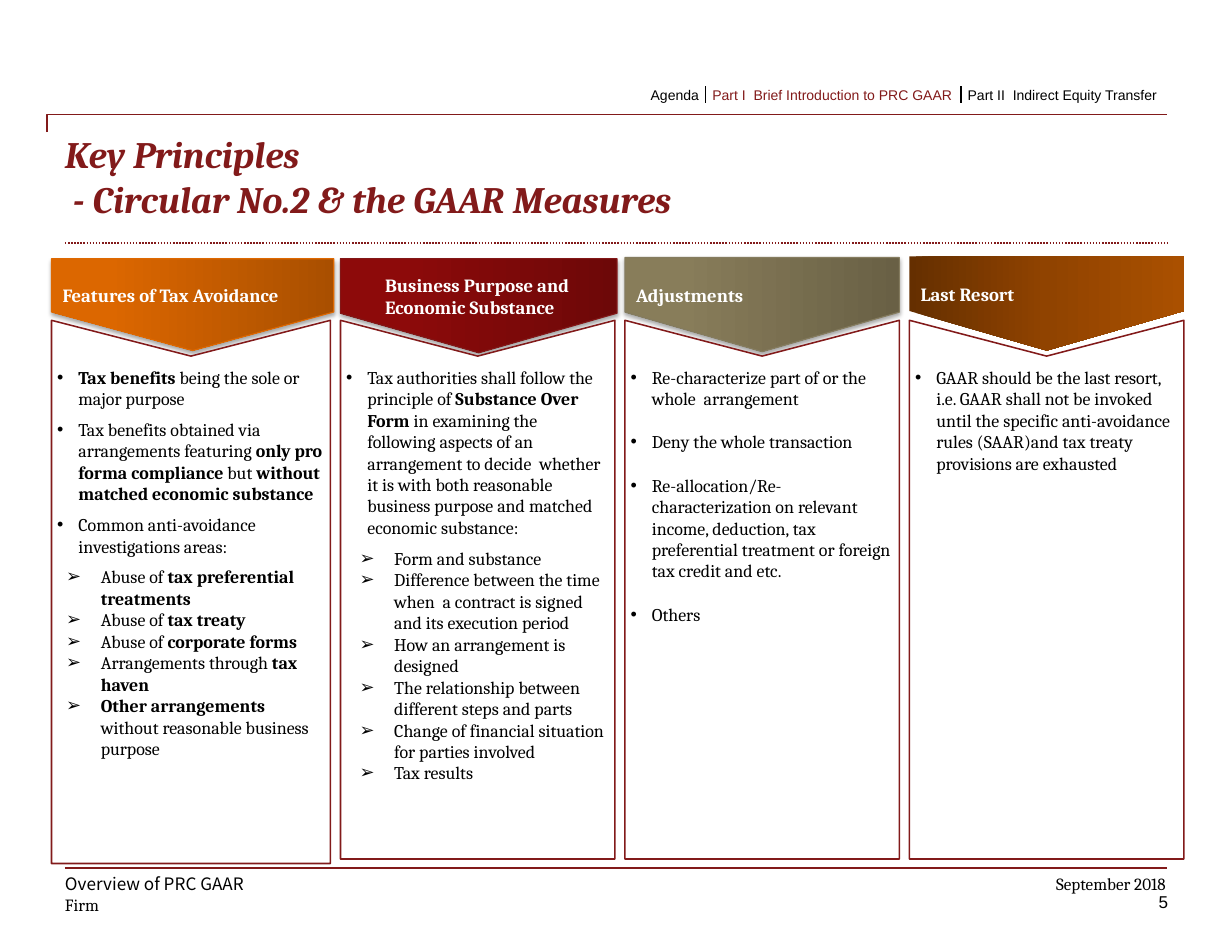
from copy import deepcopy
from dataclasses import dataclass

from lxml.etree import SubElement
from pptx import Presentation
from pptx.dml.color import RGBColor
from pptx.enum.shapes import MSO_CONNECTOR, MSO_SHAPE
from pptx.enum.dml import MSO_LINE
from pptx.enum.text import MSO_ANCHOR, MSO_AUTO_SIZE, PP_ALIGN
from pptx.oxml.ns import qn
from pptx.util import Inches, Pt


@dataclass(frozen=True)
class Theme:
    serif: str = "Cambria"
    sans: str = "Arial"
    cjk: str = "Noto Sans CJK SC"
    maroon: str = "821A1A"
    black: str = "000000"
    white: str = "FFFFFF"
    title: float = 24
    head: float = 12
    body: float = 11.5
    foot: float = 11
    nav: float = 9


@dataclass(frozen=True)
class Item:
    text: str  # **...** marks bold
    sub: bool = False
    before: float = 0
    after: float = 0


@dataclass(frozen=True)
class Column:
    heading: tuple[str, ...]
    stops: tuple[tuple[float, str], ...]
    edge: str | None  # header outline; None also means no shadow
    items: tuple[Item, ...]
    head_top: float
    head_width: float = 2.45
    head_height: float = 0.84
    bleed: float = 0  # extra reach to the left and down
    head_indent: float = 0  # left-aligned heading when set, else centred
    sub_indent: float = 0.43
    angle: int = 90


T = Theme()
WIDTH, HEIGHT = 11, 8.5
LEFT, RIGHT = 0.58, 10.42
COL_LEFT, COL_PITCH, COL_WIDTH = 0.5, 2.54, 2.45
BODY_TOP, BODY_HEIGHT, NOTCH = 2.86, 4.81, 0.32

COLUMNS = (
    Column(("Features of Tax Avoidance",),
           ((0, "A94F00"), (0.8, "DC6700"), (1, "DD6700")), "DE6800", (
        Item("**Tax benefits **being the sole or major purpose", after=6),
        Item("Tax benefits obtained via arrangements featuring **only pro forma "
             "compliance **but **without matched economic substance**", after=6),
        Item("Common anti-avoidance investigations areas:"),
        Item("Abuse of **tax preferential treatments**", True, before=6),
        Item("Abuse of **tax treaty**", True),
        Item("Abuse of **corporate forms**", True),
        Item("Arrangements through **tax haven**", True),
        Item("**Other arrangements **without reasonable business purpose", True),
    ), 2.31, 2.52, 0.82, bleed=0.04, sub_indent=0.39),
    Column(("Business Purpose and", "Economic Substance"),
           ((0, "6D0808"), (0.8, "8D0A0A"), (1, "900808")), "821717", (
        Item("Tax authorities shall follow the principle of **Substance Over Form **"
             "in examining the following aspects of an arrangement to decide  whether "
             "it is with both reasonable business purpose and matched economic substance:"),
        Item("Form and substance", True, before=6),
        Item("Difference between the time when  a contract is signed and its "
             "execution period", True),
        Item("How an arrangement is designed", True),
        Item("The relationship between different steps and parts", True),
        Item("Change of financial situation for parties involved", True),
        Item("Tax results", True),
    ), 2.31, 2.47, head_indent=0.3),
    Column(("Adjustments",),
           ((0, "696045"), (0.8, "887D5A"), (1, "8A7E59")), "857C5F", (
        Item("Re-characterize part of or the whole  arrangement", after=14),
        Item("Deny the whole transaction", after=14),
        Item("Re-allocation/Re-characterization on relevant income, deduction, tax "
             "preferential treatment or foreign tax credit and etc.", after=14),
        Item("Others"),
    ), 2.3),
    Column(("Last Resort",),
           ((0, "652F00"), (0.5, "904300"), (1, "AA5000")), None, (
        Item("GAAR should be the last resort, i.e. GAAR shall not be invoked until the "
             "specific anti-avoidance rules (SAAR)and tax treaty provisions are exhausted"),
    ), 2.29, angle=270),
)


def rgb(color: str) -> RGBColor:
    return RGBColor.from_string(color)


def add_run(p, text: str, size: float, font=T.serif, color=T.black, bold=False) -> None:
    r = p.add_run()
    r.text = text
    f = r.font
    f.name, f.size, f.bold, f.color.rgb = font, Pt(size), bold, rgb(color)


def set_insets(tf, x: float, y: float) -> None:
    tf.margin_left = tf.margin_right = Inches(x)
    tf.margin_top = tf.margin_bottom = Inches(y)


def add_label(s, box, text: str, size: float, font=T.serif, color=T.black,
              align=PP_ALIGN.LEFT, inset=0.0, leading=None) -> None:
    tf = s.shapes.add_textbox(*map(Inches, box)).text_frame
    set_insets(tf, inset, 0)
    tf.word_wrap = False
    p = tf.paragraphs[0]
    p.alignment = align
    if leading:
        p.line_spacing = Pt(leading)
    add_run(p, text, size, font, color)


def add_line(s, x1, y1, x2, y2, color=T.maroon, weight=0.75, kind=MSO_CONNECTOR.STRAIGHT):
    line = s.shapes.add_connector(kind, *map(Inches, (x1, y1, x2, y2)))
    line.line.color.rgb = rgb(color)
    line.line.width = Pt(weight)
    SubElement(line._element.spPr, qn("a:effectLst"))
    return line


def add_header(s, col: Column, left: float) -> None:
    # A pentagon turned to point down: its own width is the header's height
    w, h = col.head_height, col.head_width
    x, y = left + (h - w) / 2, col.head_top + (w - h) / 2
    sp = s.shapes.add_shape(MSO_SHAPE.PENTAGON, *map(Inches, (x, y, w, h)))
    sp.adjustments[0] = 0.42
    sp.rotation = 270
    spPr = sp._element.spPr
    spPr.find(qn("a:xfrm")).set("flipH", "1")
    sp.fill.gradient()
    sp.fill.gradient_angle = col.angle
    gs_list = spPr.find(".//" + qn("a:gsLst"))
    gs_list.append(deepcopy(gs_list[0]))
    for stop, (position, color) in zip(sp.fill.gradient_stops, col.stops):
        stop.position, stop.color.rgb = position, rgb(color)
    sp.line.fill.background()
    sp.shadow.inherit = False
    if col.edge:
        sp.line.color.rgb = rgb(col.edge)
        sp.line.width = Pt(0.75)
        shadow = SubElement(spPr.find(qn("a:effectLst")), qn("a:outerShdw"),
                            blurRad=str(Pt(3.1)), dist=str(Pt(1.8)),
                            dir="5400000", rotWithShape="0")
        clr = SubElement(shadow, qn("a:srgbClr"), val=T.black)
        SubElement(clr, qn("a:alpha"), val="35000")
    tf = sp.text_frame
    tf.word_wrap = False
    tf.vertical_anchor = MSO_ANCHOR.MIDDLE
    set_insets(tf, 0.05, 0.05)
    tf._txBody.bodyPr.set("vert", "eaVert")
    for i, text in enumerate(col.heading):
        p = tf.add_paragraph() if i else tf.paragraphs[0]
        p.alignment = PP_ALIGN.LEFT if col.head_indent else PP_ALIGN.CENTER
        p._p.get_or_add_pPr().set("marL", str(Inches(col.head_indent)))
        add_run(p, text, T.head, color=T.white, bold=True)


def add_item(p, item: Item, sub_indent: float) -> None:
    p.alignment = PP_ALIGN.LEFT
    p.level = int(item.sub)
    p.space_before, p.space_after = Pt(item.before), Pt(item.after)
    margin, hang, mark = (sub_indent, 0.31, "➢") if item.sub else (0.19, 0.19, "•")
    pPr = p._p.get_or_add_pPr()
    pPr.set("marL", str(Inches(margin)))
    pPr.set("indent", str(-Inches(hang)))
    SubElement(pPr, qn("a:buFont"), typeface=T.sans)
    SubElement(pPr, qn("a:buChar"), char=mark)
    for i, part in enumerate(item.text.split("**")):
        if part:
            add_run(p, part, T.body, bold=i % 2 == 1)


def add_body(s, col: Column, left: float, right: float) -> None:
    bottom = BODY_TOP + BODY_HEIGHT + col.bleed
    points = [(left, BODY_TOP), ((left + right) / 2, BODY_TOP + NOTCH),
              (right, BODY_TOP), (right, bottom), (left, bottom)]
    start, *rest = [(Inches(x), Inches(y)) for x, y in points]
    builder = s.shapes.build_freeform(*start)
    builder.add_line_segments(rest, close=True)
    sp = builder.convert_to_shape()
    sp.fill.solid()
    sp.fill.fore_color.rgb = rgb(T.white)
    sp.line.color.rgb = rgb(T.maroon)
    sp.line.width = Pt(1)
    sp.shadow.inherit = False
    tf = sp.text_frame
    tf.word_wrap = True
    tf.vertical_anchor = MSO_ANCHOR.TOP
    set_insets(tf, 0.05, 0.05)
    tf.margin_top = Inches(0.41)  # clears the notch
    for i, item in enumerate(col.items):
        add_item(tf.add_paragraph() if i else tf.paragraphs[0], item, col.sub_indent)


def add_title(s, text: str) -> None:
    sp = s.shapes.title
    sp.left, sp.top, sp.width, sp.height = map(Inches, (LEFT, 1.17, RIGHT - LEFT, 0.92))
    tf = sp.text_frame
    set_insets(tf, 0, 0)
    tf.auto_size, tf.vertical_anchor = MSO_AUTO_SIZE.NONE, MSO_ANCHOR.TOP
    p = tf.paragraphs[0]
    p.text, p.alignment = text, PP_ALIGN.LEFT
    for r in p.runs:
        f = r.font
        f.name, f.size, f.color.rgb = T.serif, Pt(T.title), rgb(T.maroon)
        f.bold = f.italic = True


def main() -> None:
    prs = Presentation()
    prs.slide_width, prs.slide_height = Inches(WIDTH), Inches(HEIGHT)
    s = prs.slides.add_slide(prs.slide_layouts[5])

    # Title and rules
    add_title(s, "Key Principles\v - Circular No.2 & the GAAR Measures")
    add_line(s, LEFT, 7.75, RIGHT, 7.75)
    add_line(s, LEFT, 2.17, RIGHT, 2.17, weight=1).line.dash_style = MSO_LINE.ROUND_DOT
    bracket = add_line(s, 0.42, 1.18, RIGHT, 1.02, kind=MSO_CONNECTOR.ELBOW)
    guides = bracket._element.spPr.find(".//" + qn("a:avLst"))
    SubElement(guides, qn("a:gd"), name="adj1", fmla="val 0")

    # Columns
    for i, col in enumerate(COLUMNS):
        left = COL_LEFT + i * COL_PITCH
        add_header(s, col, left - col.bleed)
        add_body(s, col, left - col.bleed, left + COL_WIDTH)

    # Section navigation
    for x, w, text, color in ((5.78, 0.5, "Agenda", T.black),
                              (6.33, 2.22, "Part I  Brief Introduction to PRC GAAR", T.maroon),
                              (8.61, 1.81, "Part II  Indirect Equity Transfer", T.black)):
        add_label(s, (x, 0.77, w, 0.15), text, T.nav, T.sans, color, inset=0.03)
    for x in (6.3, 8.58):
        add_line(s, x, 0.77, x, 0.92, T.black, 1)

    # Footer
    add_label(s, (LEFT, 7.8, 3.17, 0.19), "Overview of PRC GAAR", T.foot, T.cjk)
    add_label(s, (LEFT, 8.03, 0.6, 0.14), "Firm", T.foot, leading=10)
    add_label(s, (9.3, 7.8, 1.11, 0.19), "September 2018", T.foot, align=PP_ALIGN.RIGHT)
    add_label(s, (10.08, 8, 0.35, 0.17), "5", T.foot, T.sans, align=PP_ALIGN.RIGHT, leading=10)
    prs.save("out.pptx")


if __name__ == "__main__":
    main()
